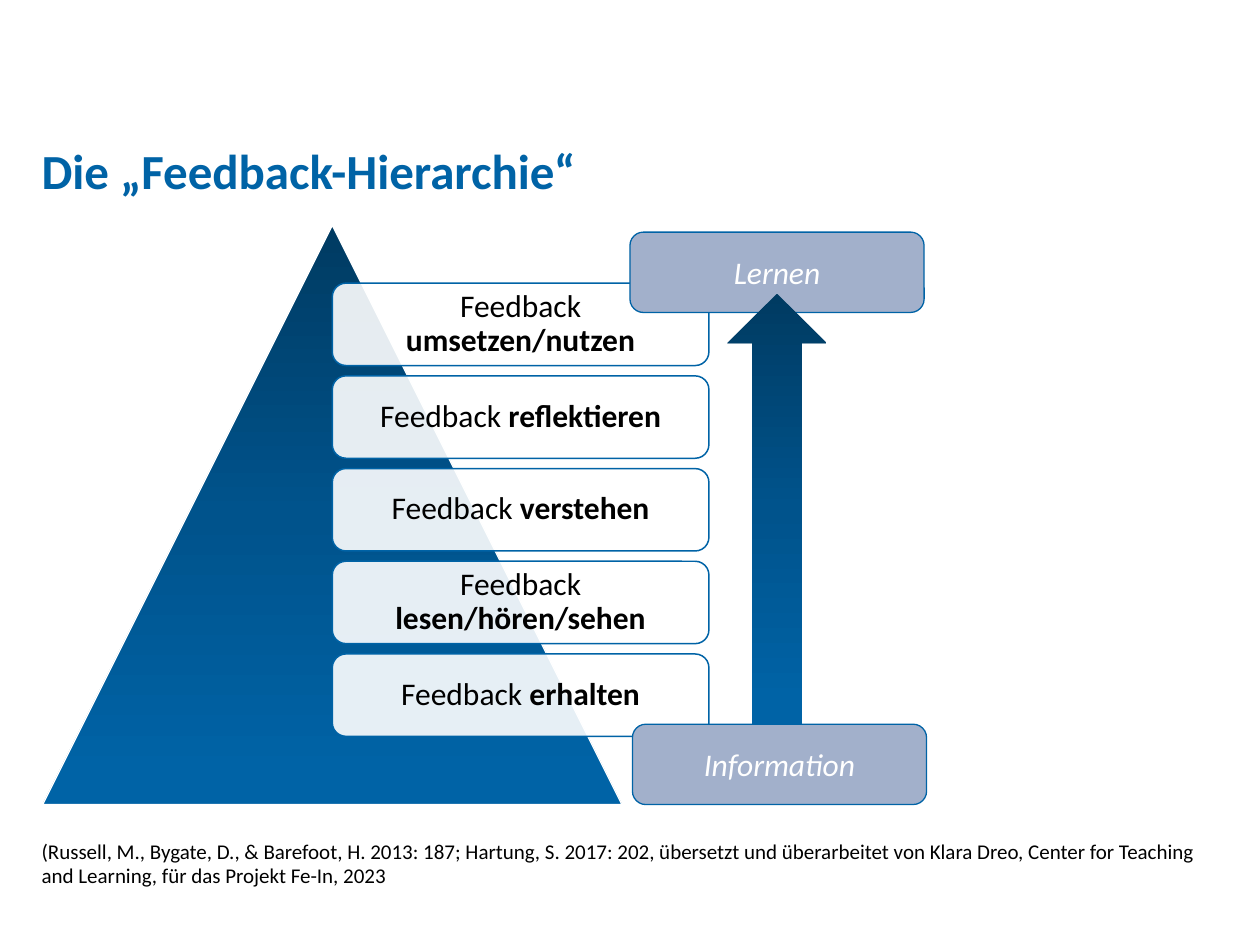
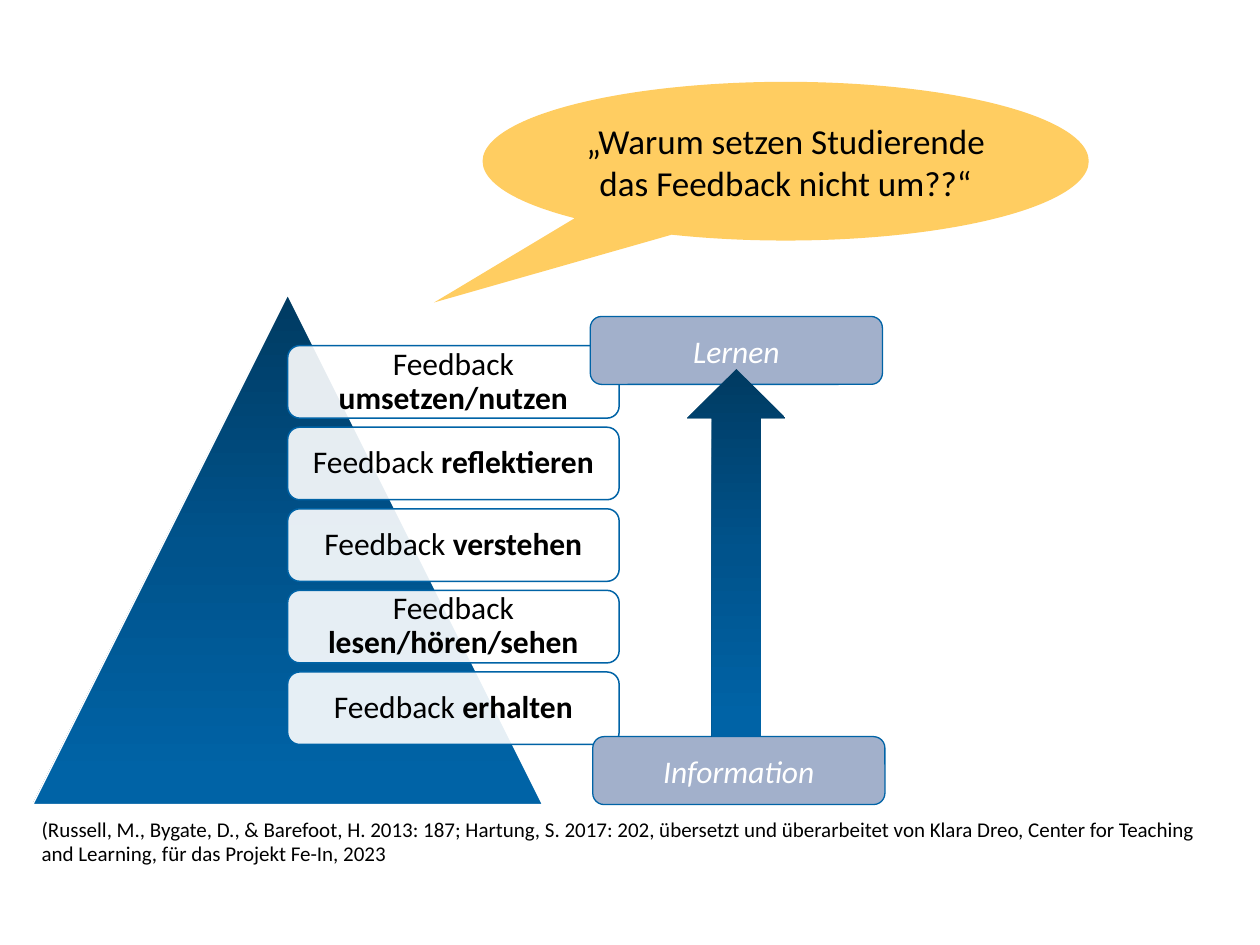
from lxml import etree
from pptx import Presentation
from pptx import util as u
from pptx.dml import color as c
from pptx.enum import shapes, text
from pptx.oxml import ns

COLORS = {
    "blue": "0063A6",
    "mid": "00538C",
    "navy": "003B62",
    "badge": "A2B0CB",
    "bubble": "FFCD61",
    "white": "FFFFFF",
    "black": "000000",
}
GRADIENT = [(0, "navy"), (50, "mid"), (95, "blue")]
STEPS = ["umsetzen/nutzen", "reflektieren", "verstehen", "lesen/hören/sehen", "erhalten"]
SOURCE = (
    "(Russell, M., Bygate, D., & Barefoot, H. 2013: 187; Hartung, S. 2017: 202, "
    "übersetzt und überarbeitet von Klara Dreo, Center for Teaching and Learning, "
    "für das Projekt Fe-In, 2023"
)
MARGIN = 0.84
TEXT_WIDTH = 23.7


class Painter:
    font = "Calibri"

    def __init__(self, deck):
        self.deck = deck
        self.page = None

    def new_page(self):
        self.page = self.deck.slides.add_slide(self.deck.slide_layouts[6])

    def rgb(self, name):
        return c.RGBColor.from_string(COLORS[name])

    def shape(self, kind, place, fill=None, line=None, weight=0.85):
        shape = self.page.shapes.add_shape(kind, *map(u.Cm, place))
        shape.shadow.inherit = False
        if fill:
            shape.fill.solid()
            shape.fill.fore_color.rgb = self.rgb(fill)
        else:
            self.shade(shape)
        if line:
            shape.line.color.rgb = self.rgb(line)
            shape.line.width = u.Pt(weight)
        else:
            shape.line.fill.background()
        return shape

    def shade(self, shape):
        shape.fill.gradient()
        shape.fill.gradient_angle = 270
        stops = shape.element.spPr.find(".//" + ns.qn("a:gsLst"))
        for stop in list(stops):
            stops.remove(stop)
        for position, name in GRADIENT:
            stop = etree.SubElement(stops, ns.qn("a:gs"), pos=str(position * 1000))
            etree.SubElement(stop, ns.qn("a:srgbClr"), val=COLORS[name])

    def label(self, shape, spans, size, color="black", align=text.PP_ALIGN.CENTER,
              anchor=text.MSO_ANCHOR.MIDDLE, spacing=1.0, inset=None):
        frame = shape.text_frame
        frame.word_wrap = True
        frame.vertical_anchor = anchor
        if inset is not None:
            frame.margin_left = frame.margin_right = u.Cm(inset)
            frame.margin_top = frame.margin_bottom = u.Cm(inset)
        para = frame.paragraphs[0]
        para.alignment = align
        para.line_spacing = spacing
        for words, bold, italic in spans:
            span = para.add_run()
            span.text = words
            span.font.name = self.font
            span.font.size = u.Pt(size)
            span.font.color.rgb = self.rgb(color)
            span.font.bold = bold
            span.font.italic = italic

    def text_box(self, words, top, height, size, color, bold, anchor, spacing):
        box = self.page.shapes.add_textbox(*map(u.Cm, (MARGIN, top, TEXT_WIDTH, height)))
        self.label(box, [(words, bold, False)], size, color,
                   text.PP_ALIGN.LEFT, anchor, spacing, inset=0)

    def title(self, words):
        self.text_box(words, 1.88, 2.16, 28, "blue", True, text.MSO_ANCHOR.BOTTOM, 0.9)

    def source(self, top):
        self.text_box(SOURCE, top, 1.02, 12, "black", False, text.MSO_ANCHOR.TOP, 0.95)

    def pyramid(self, left, top, size):
        self.shape(shapes.MSO_SHAPE.ISOSCELES_TRIANGLE, (left, top, size, size), line="white")
        pitch = 0.16 * size
        for index, step in enumerate(STEPS):
            place = (left + size / 2, top + 0.1 * size + index * pitch,
                     0.65 * size, pitch * 8 / 9)
            card = self.shape(shapes.MSO_SHAPE.ROUNDED_RECTANGLE, place, "white", "blue")
            fill_color = card.element.spPr.find(ns.qn("a:solidFill"))[0]
            etree.SubElement(fill_color, ns.qn("a:alpha"), val="90000")
            self.label(card, [("Feedback ", False, False), (step, True, False)], 18,
                       spacing=0.9, inset=0.18)

    def badge(self, words, place):
        badge = self.shape(shapes.MSO_SHAPE.ROUNDED_RECTANGLE, place, "badge", "blue", 0.75)
        self.label(badge, [(words, False, True)], 18, "white")

    def learning_path(self, left, top, bottom, width, height, arrow_top, arrow_width):
        self.badge("Lernen", (left, top, width, height))
        self.badge("Information", (left + 0.05, bottom, width, height))
        arrow_left = left + (width - arrow_width) / 2
        self.shape(shapes.MSO_SHAPE.UP_ARROW,
                   (arrow_left, arrow_top, arrow_width, bottom - arrow_top))

    def bubble(self, words, place, tip):
        bubble = self.shape(shapes.MSO_SHAPE.OVAL_CALLOUT, place, "bubble")
        bubble.adjustments[0], bubble.adjustments[1] = tip
        self.label(bubble, [(words, False, False)], 20)


def main():
    deck = Presentation()
    deck.slide_width, deck.slide_height = u.Cm(25.4), u.Cm(19.05)
    painter = Painter(deck)

    painter.new_page()
    painter.title("Die „Feedback-Hierarchie“")
    painter.pyramid(0.86, 4.54, 11.68)
    painter.learning_path(12.7, 4.68, 14.6, 5.93, 1.62, 5.92, 2)
    painter.source(16.94)

    painter.new_page()
    painter.pyramid(0.66, 5.94, 10.28)
    painter.learning_path(11.9, 6.38, 14.85, 5.89, 1.37, 7.44, 1.98)
    painter.source(16.5)
    painter.bubble("„Warum setzen Studierende das Feedback nicht um??“",
                   (9.73, 1.65, 12.22, 3.2), (-0.58, 0.89))

    deck.save("out.pptx")


if __name__ == "__main__":
    main()
